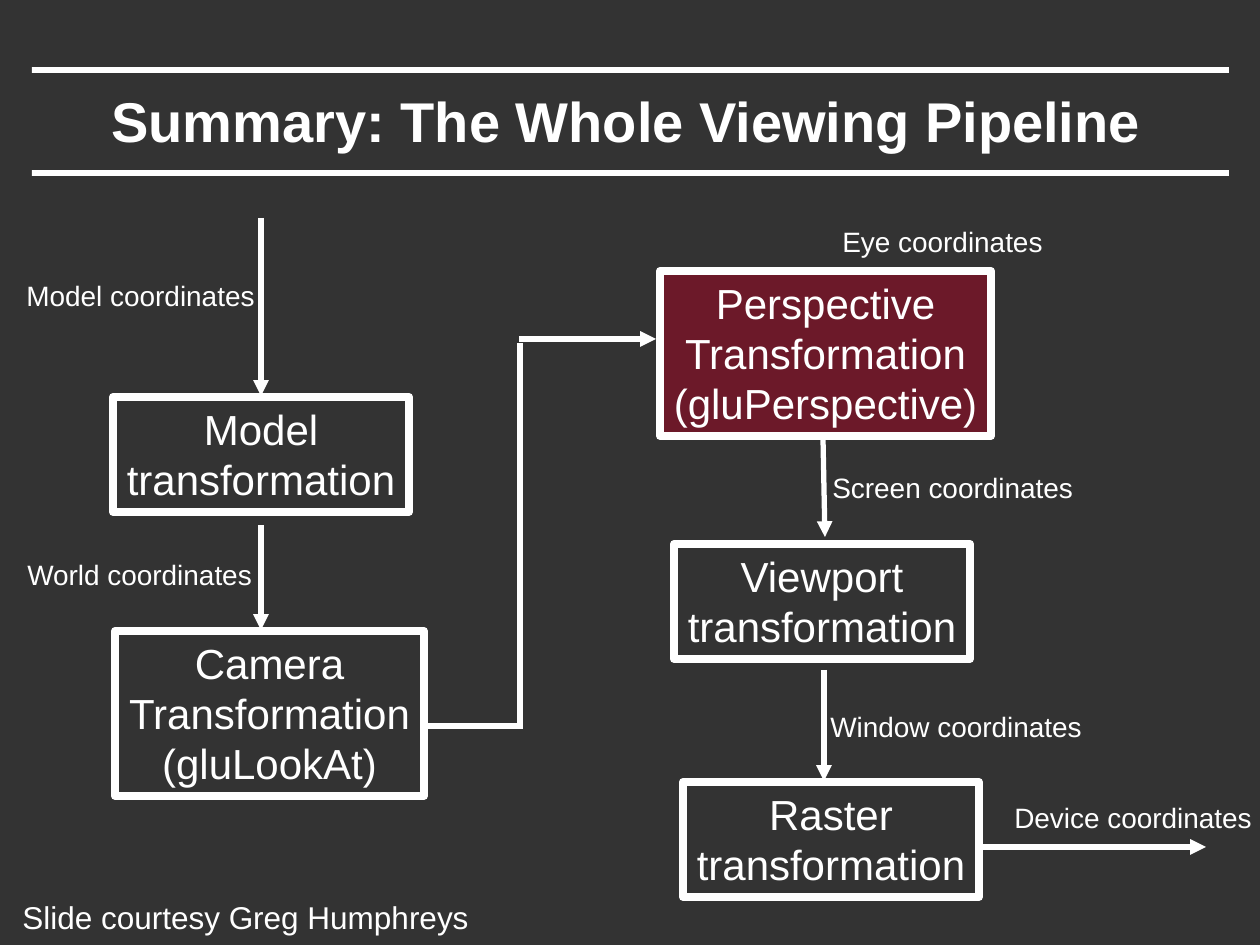
from lxml.etree import SubElement
from pptx import Presentation
from pptx.dml.color import RGBColor
from pptx.enum.shapes import MSO_CONNECTOR as Connector, MSO_SHAPE as Shape
from pptx.enum.text import MSO_ANCHOR as Anchor, PP_ALIGN as Align
from pptx.oxml.ns import qn
from pptx.util import Emu, Pt

PX = 914400 / 126
COLORS = {"back": "333333", "ink": "FFFFFF", "accent": "A50021"}

TITLE = ("Summary: The Whole Viewing Pipeline", (93, 73, 1067, 95))
RULES = [(32, 170, 1197, 6), (32, 67, 1197, 6)]
STAGES = [
    (["Model", "transformation"], (113, 397, 296, 115), None),
    (["Camera", "Transformation", "(gluLookAt)"], (115, 631, 309, 165), None),
    (["Perspective", "Transformation", "(gluPerspective)"], (660, 271, 331, 165), "accent"),
    (["Viewport", "transformation"], (674, 544, 296, 115), None),
    (["Raster", "transformation"], (683, 782, 296, 115), None),
]
LABELS = [
    ("Model coordinates", (14, 272, 257, 47), 16),
    ("World coordinates", (15, 551, 253, 47), 16),
    ("Eye coordinates", (830, 218, 228, 47), 16),
    ("Screen coordinates", (820, 464, 270, 47), 16),
    ("Window coordinates", (818, 703, 280, 47), 16),
    ("Device coordinates", (1002, 794, 266, 47), 16),
    ("Slide courtesy Greg Humphreys", (10, 892, 476, 50), 18),
]
ARROWS = [
    (261, 218, 261, 396),
    (261, 525, 261, 630),
    (823, 437, 825, 537),
    (824, 670, 824, 781),
    (982, 847, 1206, 847),
    (519, 339, 656, 339),
]
PLAIN_LINES = [(423, 726, 523, 726), (520, 727, 520, 343)]


def px(*values):
    return [Emu(round(value * PX)) for value in values]


def color(name):
    return RGBColor.from_string(COLORS[name])


def write(box, lines, size, align, wrap=False, bold=False, anchor=Anchor.TOP):
    frame = box.text_frame
    frame.word_wrap = wrap
    frame.vertical_anchor = anchor
    frame.text = "\n".join(lines)
    for para in frame.paragraphs:
        para.alignment = align
        for span in para.runs:
            for key, value in {"name": "Arial", "size": Pt(size), "bold": bold}.items():
                setattr(span.font, key, value)
            span.font.color.rgb = color("ink")


def add_rect(page, place, fill):
    box = page.shapes.add_shape(Shape.RECTANGLE, *px(*place))
    box.shadow.inherit = False
    if fill:
        box.fill.solid()
        box.fill.fore_color.rgb = color(fill)
    else:
        box.fill.background()
    return box


def add_rule(page, place):
    add_rect(page, place, "ink").line.fill.background()


def add_stage(page, lines, place, fill):
    box = add_rect(page, place, fill)
    if fill:
        tint = box.fill._xPr.find(".//" + qn("a:srgbClr"))
        SubElement(tint, qn("a:alpha"), val="50000")
    box.line.color.rgb = color("ink")
    box.line.width = Pt(4.5)
    write(box, lines, 24, Align.CENTER)


def add_text(page, words, place, size, align=Align.LEFT, **options):
    write(page.shapes.add_textbox(*px(*place)), [words], size, align, **options)


def add_line(page, ends, arrow):
    line = page.shapes.add_connector(Connector.STRAIGHT, *px(*ends))
    line.line.color.rgb = color("ink")
    line.line.width = Pt(3)
    if arrow:
        SubElement(line.line._get_or_add_ln(), qn("a:tailEnd"), type="triangle")
    SubElement(line._element.spPr, qn("a:effectLst"))


def main():
    deck = Presentation()
    deck.slide_width, deck.slide_height = px(1260, 945)
    page = deck.slides.add_slide(deck.slide_layouts[6])
    page.background.fill.solid()
    page.background.fill.fore_color.rgb = color("back")

    for place in RULES:
        add_rule(page, place)
    add_text(page, *TITLE, 32, Align.CENTER, wrap=True, bold=True, anchor=Anchor.MIDDLE)
    for stage in STAGES:
        add_stage(page, *stage)
    for ends in ARROWS:
        add_line(page, ends, True)
    for ends in PLAIN_LINES:
        add_line(page, ends, False)
    for label in LABELS:
        add_text(page, *label)
    deck.save("out.pptx")


if __name__ == "__main__":
    main()
